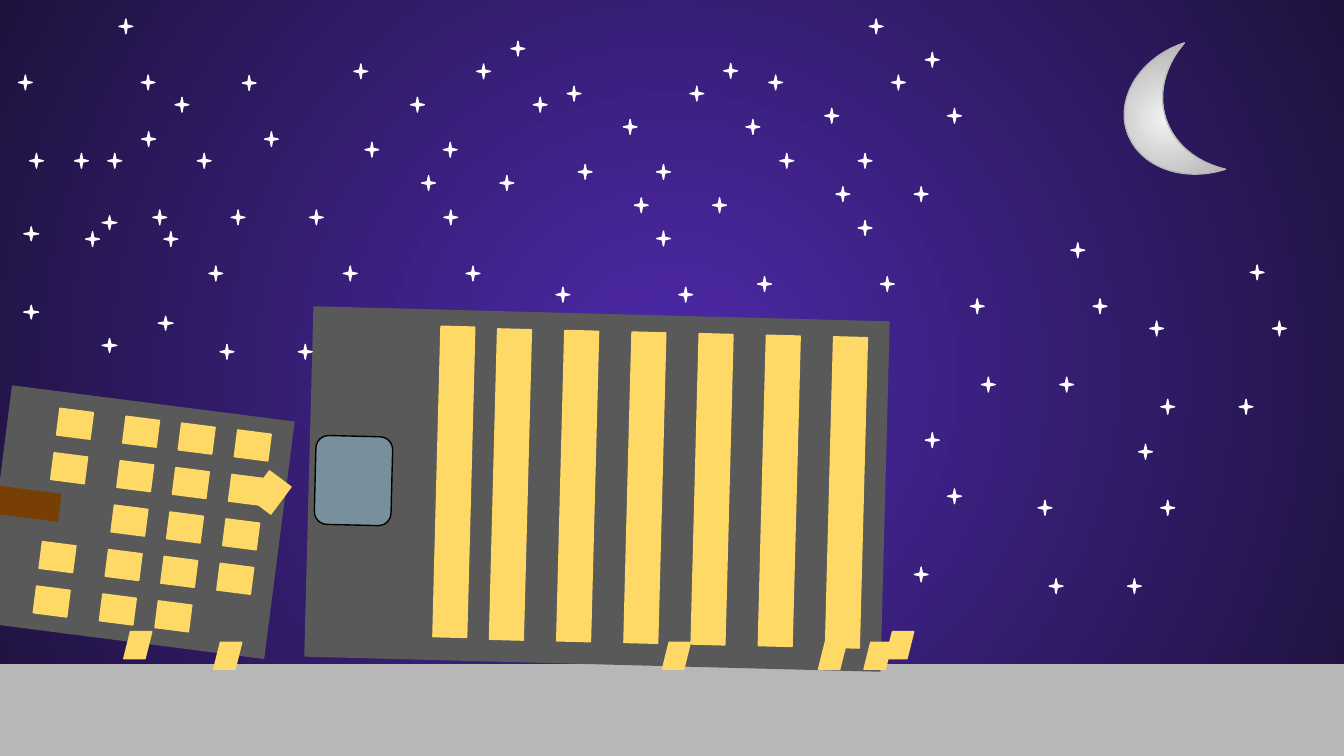
from dataclasses import dataclass

from lxml import etree
from pptx import Presentation
from pptx import util as u
from pptx.dml.color import RGBColor
from pptx.dml.fill import FillFormat
from pptx.enum import shapes
from pptx.oxml.ns import qn
from pptx.shapes.autoshape import Shape
from pptx.slide import Slide

SKY_GLOW = RGBColor(0x4E, 0x29, 0xAA)
SKY_DARK = RGBColor(0x1E, 0x12, 0x3D)
GROUND = RGBColor(0xB7, 0xB7, 0xB7)
WALL = RGBColor(0x59, 0x59, 0x59)
LIGHT = RGBColor(0xFF, 0xD9, 0x66)
DOOR = RGBColor(0x78, 0x3F, 0x04)
GLASS = RGBColor(0x78, 0x90, 0x9C)
BLACK = RGBColor(0x00, 0x00, 0x00)
WHITE = RGBColor(0xFF, 0xFF, 0xFF)
MOON_LIGHT = RGBColor(0xF2, 0xF2, 0xF2)
MOON_DARK = RGBColor(0xA6, 0xA6, 0xA6)

KIND = shapes.MSO_SHAPE
ANNEX_TILT = 97.3
TOWER_TILT = 91.5
ROW_STEP = (-0.11, 0.84)
STAR_OFFSETS = [(0, 0), (0.42, 1.06), (-1.9, 1.06), (-0.21, 2.54), (-1.69, 2.54)]


@dataclass(frozen=True)
class Box:
    """Unrotated frame in centimetres, with its rotation in degrees."""
    left: float
    top: float
    width: float
    height: float
    rotation: float = 0


@dataclass(frozen=True)
class WindowColumn:
    left: float
    top: float
    rows: tuple[int, ...]


@dataclass(frozen=True)
class StarCluster:
    """Top star of a cluster and which of its five stars are shown."""
    left: float
    top: float
    stars: tuple[int, ...] = (0, 1, 2, 3, 4)
    turned: bool = False


WINDOW_COLUMNS = [
    WindowColumn(4.52, 8.1, (0, 1, 2, 3)),
    WindowColumn(3.46, 7.97, (0, 1, 2, 3, 4)),
    WindowColumn(2.41, 7.84, (0, 1, 2, 3, 4)),
    WindowColumn(1.16, 7.69, (0, 1, 3, 4)),
]
STAR_CLUSTERS = [
    StarCluster(4.58, 1.43),
    StarCluster(3.31, 1.84),
    StarCluster(2.25, 0.36),
    StarCluster(5.85, 3.97, (0, 2, 3, 4)),
    StarCluster(3.0, 5.97, turned=True),
    StarCluster(16.43, 0.36),
    StarCluster(17.49, 0.99),
    StarCluster(16.22, 4.17, (0, 1, 2)),
    StarCluster(20.24, 4.59),
    StarCluster(17.49, 8.18, (0, 1, 3)),
    StarCluster(23.63, 5.01),
    StarCluster(21.52, 8.4),
    StarCluster(12.62, 0.57, (1, 2, 3, 4)),
    StarCluster(13.68, 1.2),
    StarCluster(12.41, 4.37, (0, 1, 2)),
    StarCluster(8.59, 0.15, (1, 2, 3, 4)),
    StarCluster(9.66, 0.78),
    StarCluster(8.39, 3.97, (0, 1, 2)),
]
FALLEN_LIGHTS = [(16.74, 11.94), (16.33, 12.14), (15.47, 12.14),
                 (12.52, 12.14), (4.04, 12.14), (2.34, 11.94)]


def draw(slide: Slide, kind: KIND, box: Box, color: RGBColor,
         line: RGBColor | None = None) -> Shape:
    """Add a flat shape whose outline matches its fill unless a line is given."""
    shape = slide.shapes.add_shape(kind, u.Cm(box.left), u.Cm(box.top),
                                   u.Cm(box.width), u.Cm(box.height))
    shape.rotation = box.rotation
    shape.shadow.inherit = False
    shape.fill.solid()
    shape.fill.fore_color.rgb = color
    shape.line.color.rgb = line or color
    shape.line.width = u.Pt(0.75)
    return shape


def fill_radially(fill: FillFormat, element: etree.ElementBase,
                  center: RGBColor, edge: RGBColor) -> None:
    """Give the fill inside element a circular gradient from its middle."""
    fill.gradient()
    for stop, color in zip(fill.gradient_stops, (center, edge)):
        stop.color.rgb = color
    gradient = next(element.iter(qn("a:gradFill")))
    circle = etree.Element(qn("a:path"), {"path": "circle"})
    etree.SubElement(circle, qn("a:fillToRect"),
                     {side: "50000" for side in "ltrb"})
    gradient.replace(gradient.find(qn("a:lin")), circle)


def draw_annex(slide: Slide) -> None:
    draw(slide, KIND.RECTANGLE, Box(0.36, 7.19, 4.5, 5.36, ANNEX_TILT), WALL)


def draw_annex_details(slide: Slide) -> None:
    for column in WINDOW_COLUMNS:
        for row in column.rows:
            box = Box(column.left + row * ROW_STEP[0], column.top + row * ROW_STEP[1],
                      0.51, 0.64, ANNEX_TILT)
            draw(slide, KIND.RECTANGLE, box, LIGHT)
    draw(slide, KIND.RECTANGLE, Box(4.85, 8.99, 0.51, 0.64, 36.7), LIGHT)
    draw(slide, KIND.RECTANGLE, Box(0.28, 8.94, 0.51, 1.17, ANNEX_TILT), DOOR)


def draw_tower_details(slide: Slide) -> None:
    bars = [(5.64, 8.79)] + [(6.71 + 1.27 * i, 8.84 + 0.03 * i) for i in range(6)]
    for left, top in bars:
        draw(slide, KIND.RECTANGLE, Box(left, top, 5.87, 0.64, TOWER_TILT), LIGHT)
    draw(slide, KIND.ROUNDED_RECTANGLE, Box(5.84, 8.36, 1.68, 1.45, 91.4), GLASS, BLACK)


def draw_cluster(slide: Slide, cluster: StarCluster) -> None:
    for index in cluster.stars:
        right, down = STAR_OFFSETS[index]
        if cluster.turned:
            right, down = -down, right
        box = Box(cluster.left + right, cluster.top + down, 0.26, 0.28,
                  90 if cluster.turned else 0)
        draw(slide, KIND.STAR_4_POINT, box, WHITE).adjustments[0] = 0.125


def main() -> None:
    presentation = Presentation()
    presentation.slide_width = u.Cm(25.4)
    presentation.slide_height = u.Cm(14.29)
    slide = presentation.slides.add_slide(presentation.slide_layouts[6])
    fill_radially(slide.background.fill, slide.element, SKY_GLOW, SKY_DARK)

    draw(slide, KIND.RECTANGLE, Box(0, 12.57, 25.4, 1.72), GROUND)
    draw_annex(slide)
    draw(slide, KIND.RECTANGLE, Box(7.98, 3.81, 6.6, 10.87, TOWER_TILT), WALL)
    moon = draw(slide, KIND.MOON, Box(21.26, 0.99, 1.55, 2.51, 342), GROUND)
    fill_radially(moon.fill, moon.element, MOON_LIGHT, MOON_DARK)
    draw_annex_details(slide)
    draw_tower_details(slide)
    for cluster in STAR_CLUSTERS:
        draw_cluster(slide, cluster)
    for left, top in FALLEN_LIGHTS:
        draw(slide, KIND.PARALLELOGRAM, Box(left, top, 0.53, 0.51), LIGHT)

    presentation.save("out.pptx")


if __name__ == "__main__":
    main()
